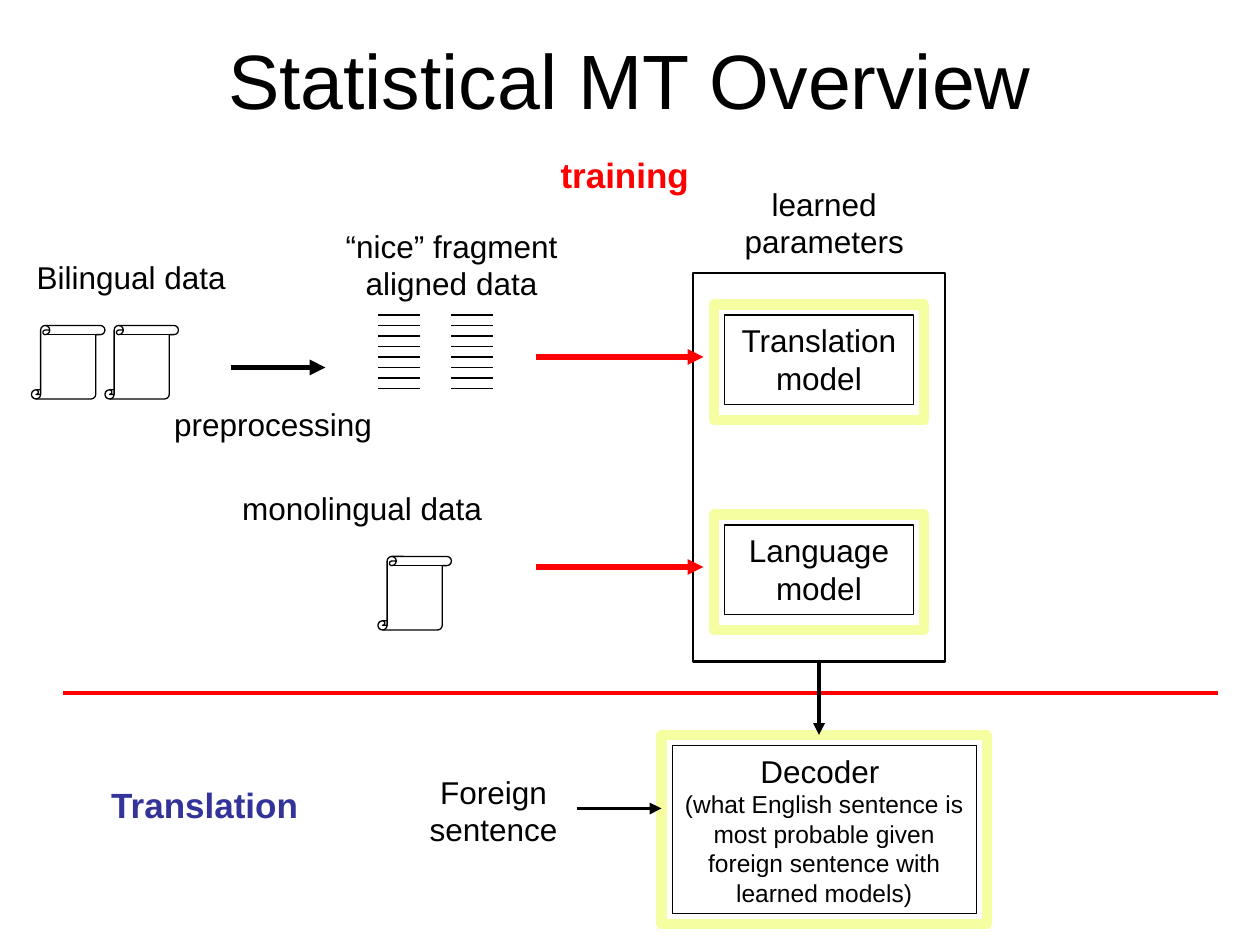
from pptx import Presentation
from pptx.dml.color import RGBColor
from pptx.enum.shapes import MSO_CONNECTOR, MSO_SHAPE
from pptx.enum.text import MSO_ANCHOR, PP_ALIGN
from pptx.oxml.ns import qn
from pptx.util import Inches, Pt
from lxml import etree

RECTANGLE, SCROLL = MSO_SHAPE.RECTANGLE, MSO_SHAPE.VERTICAL_SCROLL
STRAIGHT = MSO_CONNECTOR.STRAIGHT
CENTER, MIDDLE = PP_ALIGN.CENTER, MSO_ANCHOR.MIDDLE

COLUMNS, ROWS = 120, 90
WIDTH, HEIGHT = Inches(10), Inches(7.5)
FONT = "Arial"
BLACK, RED, BLUE, YELLOW = "000000", "FF0000", "333399", "F5FEA0"

TITLE = ("Statistical MT Overview", (6, 0, 108, 15))
LABELS = [
    ("Bilingual data", (-2, 24, 29, 4.8)),
    ("preprocessing", (15, 38, 22, 4.8)),
    ("“nice” fragment aligned data", (30, 21, 26, 8.4)),
    ("monolingual data", (20, 46, 29, 4.8)),
    ("learned parameters", (69, 17, 19, 8.4)),
    ("Foreign sentence", (37, 73, 20, 8.4)),
]
PHASES = [
    ("training", (52, 14, 15, 5.2), RED),
    ("Translation", (8, 74, 23, 5.2), BLUE),
]
MODELS = [("Translation model", 30), ("Language model", 50)]
DECODER = (
    "Decoder \v(what English sentence is most probable "
    "given foreign sentence with learned models)"
)
SCROLLS = [(3, 31), (10, 31), (36, 53)]
FRAGMENT_COLUMNS, FRAGMENT_ROWS = (36, 43), range(30, 38)
ARROWS = [
    ((22, 35), (31, 35), BLACK, 3),
    ((55, 77), (63, 77), BLACK, 2.25),
    ((51, 34), (67, 34), RED, 3),
    ((51, 54), (67, 54), RED, 3),
]


def color(value):
    return RGBColor.from_string(value)


def across(column):
    return round(WIDTH * column / COLUMNS)


def down(row):
    return round(HEIGHT * row / ROWS)


def place(area):
    left, top, width, height = area
    return across(left), down(top), across(width), down(height)


def write(box, text, sizes=(18,), ink=BLACK, bold=False, anchor=MSO_ANCHOR.TOP):
    frame = box.text_frame
    frame.word_wrap = True
    frame.vertical_anchor = anchor
    para = frame.paragraphs[0]
    para.text = text
    para.alignment = CENTER
    for span, size in zip(para.runs, sizes):
        span.font.name = FONT
        span.font.size = Pt(size)
        span.font.bold = bold
        span.font.color.rgb = color(ink)


def add_label(page, text, area, **style):
    write(page.shapes.add_textbox(*place(area)), text, **style)


def add_outline(page, area, ink=BLACK, weight=0.75, kind=RECTANGLE):
    shape = page.shapes.add_shape(kind, *place(area))
    shape.shadow.inherit = False
    shape.fill.background()
    shape.line.color.rgb = color(ink)
    shape.line.width = Pt(weight)
    return shape


def add_line(page, start, end, ink=BLACK, weight=0.75, arrow=False):
    line = page.shapes.add_connector(
        STRAIGHT, across(start[0]), down(start[1]), across(end[0]), down(end[1])
    )
    line.line.color.rgb = color(ink)
    line.line.width = Pt(weight)
    if arrow:
        etree.SubElement(line.line._get_or_add_ln(), qn("a:tailEnd"), type="triangle")
    etree.SubElement(line._element.spPr, qn("a:effectLst"))
    return line


def main():
    deck = Presentation()
    deck.slide_width, deck.slide_height = WIDTH, HEIGHT
    page = deck.slides.add_slide(deck.slide_layouts[6])

    add_label(page, *TITLE, sizes=(44,), anchor=MIDDLE)
    for text, area in LABELS:
        add_label(page, text, area)
    for text, area, ink in PHASES:
        add_label(page, text, area, sizes=(20,), ink=ink, bold=True)

    for left, top in SCROLLS:
        add_outline(page, (left, top, 7, 7), kind=SCROLL)
    for row in FRAGMENT_ROWS:
        for column in FRAGMENT_COLUMNS:
            add_line(page, (column, row), (column + 4, row))

    panel = add_outline(page, (66, 26, 24, 37), weight=1.5)
    for text, top in MODELS:
        write(add_outline(page, (69, top, 18, 8.5)), text)
        add_outline(page, (68, top - 1, 20, 11), YELLOW, 6)

    add_line(page, (6, 66), (116, 66), RED, 2.25)
    add_outline(page, (63, 70, 31, 18), YELLOW, 6)
    decoder = add_outline(page, (64, 71, 29, 16), weight=0.25)
    write(decoder, DECODER, sizes=(18, 14))

    for start, end, ink, weight in ARROWS:
        add_line(page, start, end, ink, weight, arrow=True)
    handover = add_line(page, (78, 63), (78, 70), weight=2.25, arrow=True)
    handover.begin_connect(panel, 2)

    deck.save("out.pptx")


if __name__ == "__main__":
    main()
